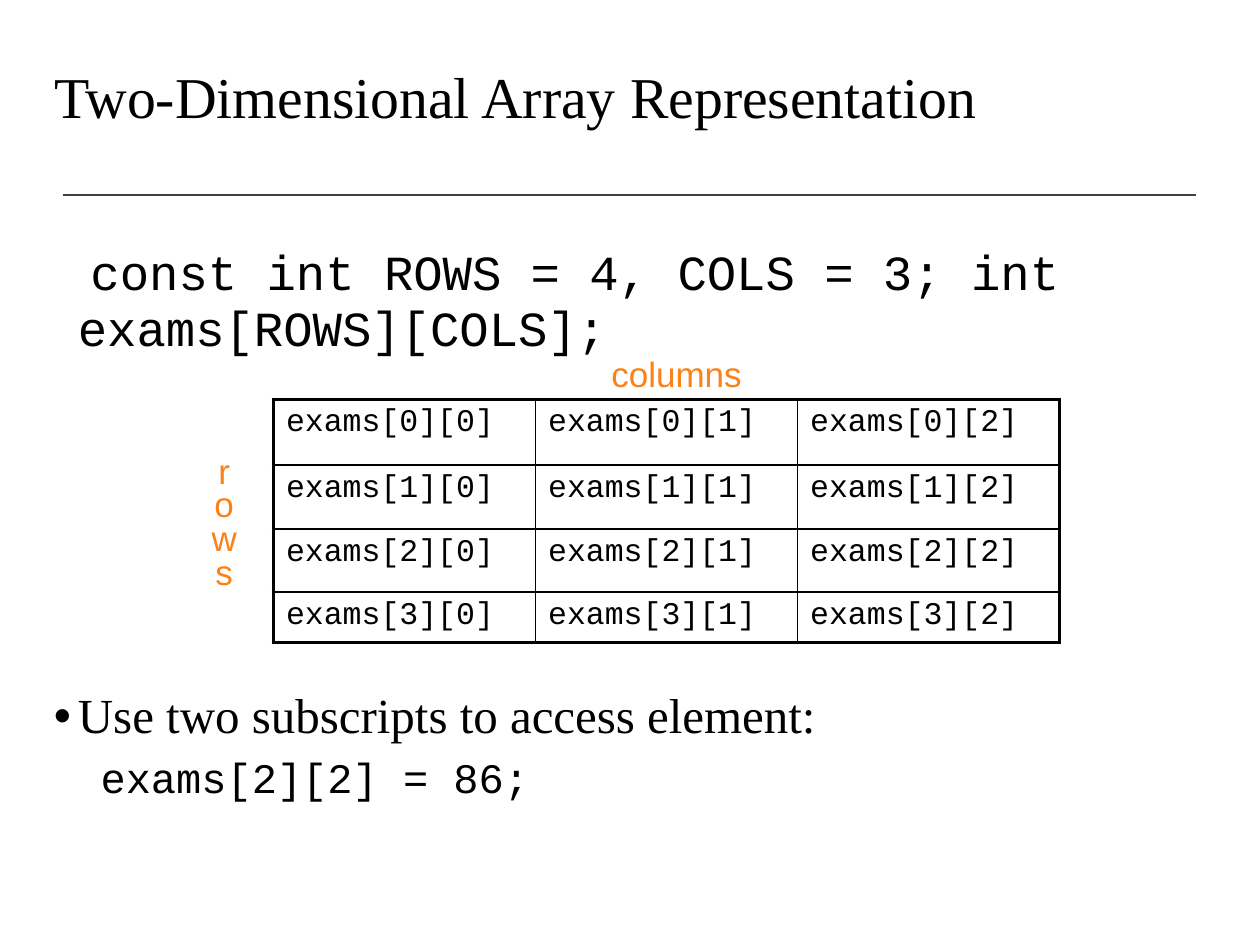
from dataclasses import dataclass

from lxml.etree import SubElement
from pptx import Presentation
from pptx.dml.color import RGBColor
from pptx.enum.text import MSO_ANCHOR, MSO_AUTO_SIZE, PP_ALIGN
from pptx.oxml.ns import qn
from pptx.util import Inches, Pt


@dataclass(frozen=True)
class Theme:
    ink: RGBColor = RGBColor(0, 0, 0)
    rule: RGBColor = RGBColor(0x40, 0x40, 0x40)
    accent: RGBColor = RGBColor(0xFA, 0x82, 0x18)
    serif: str = "Times New Roman"
    mono: str = "Courier New"
    sans: str = "Arial"
    title: int = 33
    body: int = 28
    access: int = 24
    label: int = 20
    cell: int = 18
    thin: float = 1
    thick: float = 2.25


THEME = Theme()
WIDTH, HEIGHT = Inches(10), Inches(7.5)
MARGIN, TEXT_WIDTH = Inches(0.33), Inches(8.5)
ROW_HEIGHTS = [0.52, 0.51, 0.5, 0.4]
COLUMN_WIDTHS = [2.08] * 3


def add_run(paragraph, text, font, size, color=THEME.ink):
    run = paragraph.add_run()
    run.text = text
    run.font.name = font
    run.font.size = Pt(size)
    run.font.color.rgb = color


def set_paragraph(paragraph, spacing=0.9, before=0, left=0, indent=0, bullet=None):
    paragraph.line_spacing = spacing
    paragraph.space_before = Pt(before)
    properties = paragraph._p.get_or_add_pPr()
    properties.set("marL", str(Inches(left)))
    properties.set("indent", str(Inches(indent)))
    if bullet:
        SubElement(properties, qn("a:buFont"), typeface=THEME.sans)
        SubElement(properties, qn("a:buChar"), char=bullet)


def add_text_frame(slide, left, top, width, height, wrap=True):
    frame = slide.shapes.add_textbox(left, top, width, height).text_frame
    frame.word_wrap = wrap
    return frame


def add_title(slide, text):
    title = slide.shapes.title
    title.left, title.top = MARGIN, Inches(0.17)
    title.width, title.height = TEXT_WIDTH, Inches(1.25)
    frame = title.text_frame
    frame.auto_size = MSO_AUTO_SIZE.NONE
    frame.vertical_anchor = MSO_ANCHOR.MIDDLE
    heading = frame.paragraphs[0]
    heading.alignment = PP_ALIGN.LEFT
    set_paragraph(heading)
    add_run(heading, text, THEME.serif, THEME.title)


def add_rule(slide):
    y = Inches(1.55)
    rule = slide.shapes.add_connector(1, Inches(0.5), y, Inches(9.49), y)
    rule.line.color.rgb = THEME.rule
    rule.line.width = Pt(THEME.thin)
    SubElement(rule._element.spPr, qn("a:effectLst"))


def add_declaration(slide, code):
    frame = add_text_frame(slide, MARGIN, Inches(1.9), TEXT_WIDTH, Inches(1))
    declaration = frame.paragraphs[0]
    set_paragraph(declaration, spacing=0.95, left=0.19, indent=0.1)
    add_run(declaration, code, THEME.mono, THEME.body)


def add_access(slide, statement, code):
    frame = add_text_frame(slide, MARGIN, Inches(5.44), TEXT_WIDTH, Inches(1.3))
    rule = frame.paragraphs[0]
    set_paragraph(rule, left=0.19, indent=-0.19, bullet="•")
    add_run(rule, statement, THEME.serif, THEME.body)
    example = frame.add_paragraph()
    set_paragraph(example, before=7, left=0.37)
    add_run(example, code, THEME.mono, THEME.access)


def set_borders(cell, weights):
    """Draw the cell's edges; weights maps L, R, T, B to points."""
    properties = cell._tc.get_or_add_tcPr()
    for side, weight in weights.items():
        edge = SubElement(properties, qn(f"a:ln{side}"), w=str(Pt(weight)))
        fill = SubElement(edge, qn("a:solidFill"))
        SubElement(fill, qn("a:srgbClr"), val=str(THEME.ink))


def add_array_table(slide, name):
    rows, cols = len(ROW_HEIGHTS), len(COLUMN_WIDTHS)
    table = slide.shapes.add_table(
        rows, cols, Inches(2.17), Inches(3.17),
        Inches(sum(COLUMN_WIDTHS)), Inches(sum(ROW_HEIGHTS))).table
    table.first_row = table.horz_banding = False
    for column, width in zip(table.columns, COLUMN_WIDTHS):
        column.width = Inches(width)
    for row, height in zip(table.rows, ROW_HEIGHTS):
        row.height = Inches(height)
    for r in range(rows):
        for c in range(cols):
            cell = table.cell(r, c)
            add_run(cell.text_frame.paragraphs[0], f"{name}[{r}][{c}]",
                    THEME.mono, THEME.cell)
            # Outer edges are thick, inner ones thin
            outer = {"L": c == 0, "R": c == cols - 1,
                     "T": r == 0, "B": r == rows - 1}
            set_borders(cell, {side: THEME.thick if edge else THEME.thin
                               for side, edge in outer.items()})
            cell.fill.background()


def add_axis_label(slide, lines, left, top, width, height, spacing=1.0):
    frame = add_text_frame(slide, Inches(left), Inches(top),
                           Inches(width), Inches(height), wrap=False)
    for i, line in enumerate(lines):
        paragraph = frame.add_paragraph() if i else frame.paragraphs[0]
        paragraph.alignment = PP_ALIGN.CENTER
        set_paragraph(paragraph, spacing)
        add_run(paragraph, line, THEME.sans, THEME.label, THEME.accent)


def main():
    deck = Presentation()
    deck.slide_width, deck.slide_height = WIDTH, HEIGHT
    slide = deck.slides.add_slide(deck.slide_layouts[5])

    # Heading
    add_rule(slide)
    add_title(slide, "Two-Dimensional Array Representation")

    # Declaration and the array it makes
    add_declaration(slide, "const int ROWS = 4, COLS = 3; int exams[ROWS][COLS];")
    add_array_table(slide, "exams")
    add_axis_label(slide, ["columns"], 4.75, 2.75, 1.24, 0.43)
    add_axis_label(slide, list("rows"), 1.58, 3.58, 0.4, 1.17, spacing=0.8)

    # Access to one element
    add_access(slide, "Use two subscripts to access element:", "exams[2][2] = 86;")
    deck.save("out.pptx")


if __name__ == "__main__":
    main()
